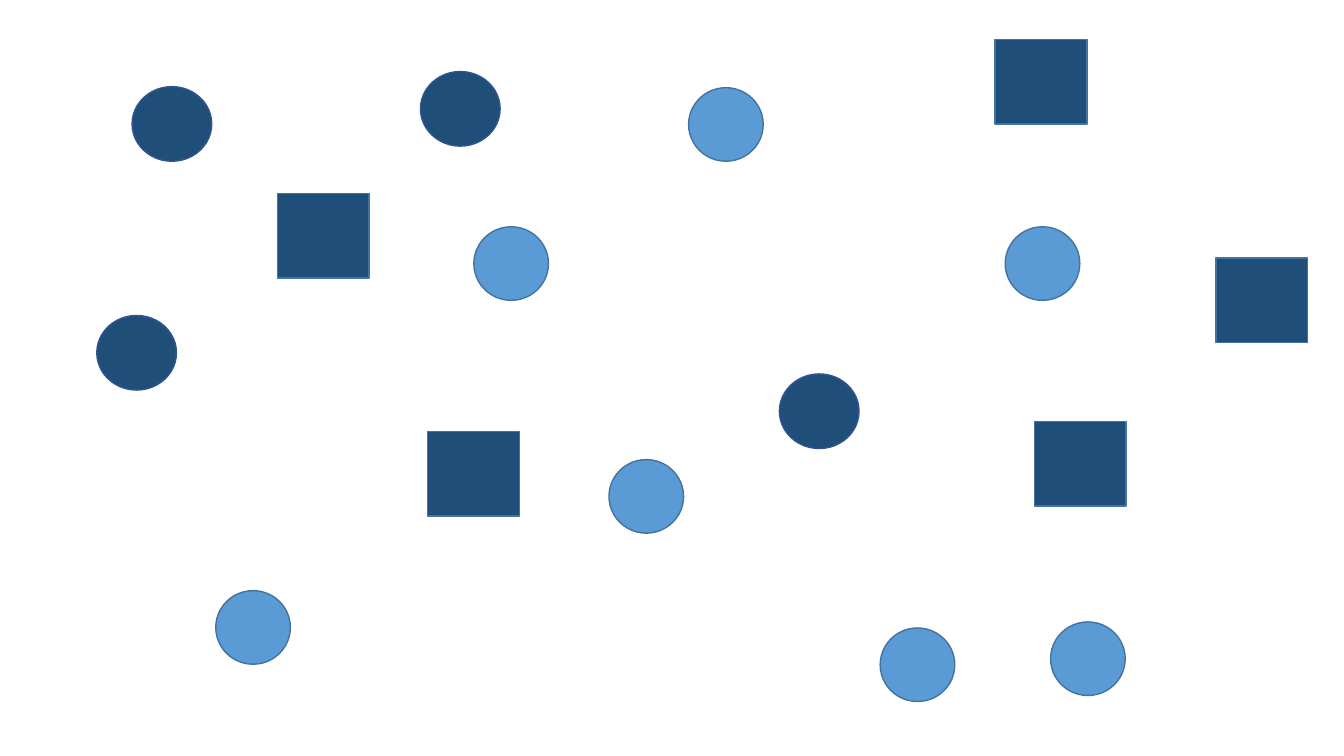
import pptx
import pptx.dml.color
import pptx.enum.shapes
import pptx.util

PX = 9144  # EMU per px, 100 px to the inch
OVAL = pptx.enum.shapes.MSO_SHAPE.OVAL
RECTANGLE = pptx.enum.shapes.MSO_SHAPE.RECTANGLE

# Left and top of each shape, in px
LIGHT_CIRCLES = [(873, 623), (997, 225), (604, 456), (1042, 617),
                 (214, 586), (683, 87), (470, 225)]
DARK_CIRCLES = [(96, 313), (773, 371), (417, 71), (131, 86)]
DARK_SQUARES = [(275, 192), (987, 39), (1026, 418), (1206, 256), (424, 428)]


def px(length):
    return pptx.util.Emu(length * PX)


def color(hex_string):
    return pptx.dml.color.RGBColor.from_string(hex_string)


def add_shapes(page, kind, places, width, height, fill, line):
    """Draw one shape of the same kind, size and colours at every place."""
    for left, top in places:
        shape = page.shapes.add_shape(
            kind, px(left), px(top), px(width), px(height))
        shape.shadow.inherit = False
        shape.fill.solid()
        shape.fill.fore_color.rgb = color(fill)
        shape.line.color.rgb = color(line)
        shape.line.width = pptx.util.Pt(1)


def main():
    deck = pptx.Presentation()
    deck.slide_width = px(1333)
    deck.slide_height = px(750)
    page = deck.slides.add_slide(deck.slide_layouts[6])

    # Scattered circles and squares
    add_shapes(page, OVAL, LIGHT_CIRCLES, 74, 73, "5B9BD5", "43739E")
    add_shapes(page, OVAL, DARK_CIRCLES, 79, 74, "1F4E79", "325491")
    add_shapes(page, RECTANGLE, DARK_SQUARES, 91, 84, "1F4E79", "43739E")

    deck.save("out.pptx")


if __name__ == "__main__":
    main()
